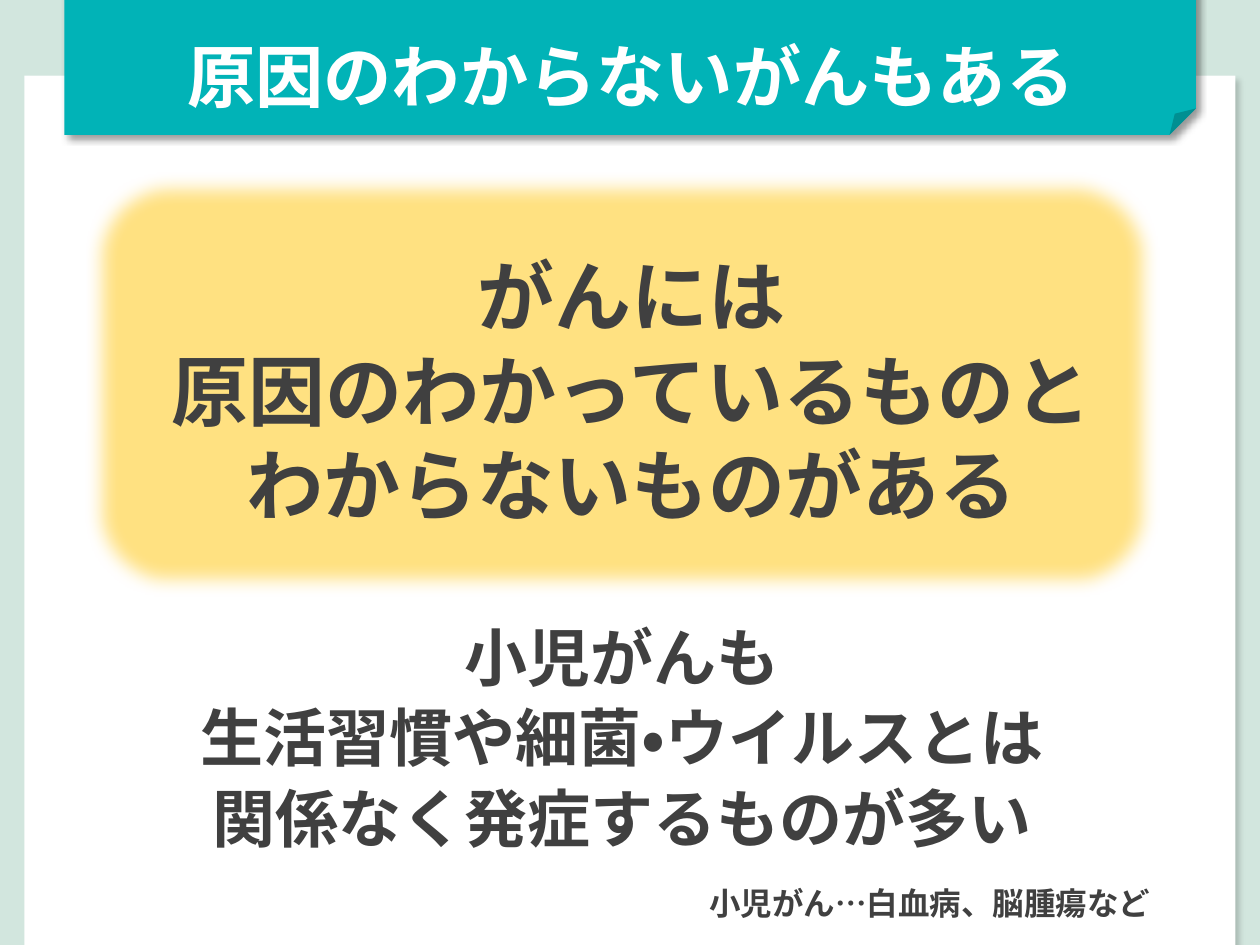
import pptx
import pptx.util
import pptx.dml.color
import pptx.enum.shapes
import pptx.enum.text
import pptx.oxml
import pptx.oxml.ns

Pt = pptx.util.Pt
Shape = pptx.enum.shapes.MSO_SHAPE
Align = pptx.enum.text.PP_ALIGN
Anchor = pptx.enum.text.MSO_ANCHOR

# Content: each line is a list of (text, letter spacing in points)
TITLE = [[("原因のわからないがんもある", 0)]]
MESSAGE = [
    [("がんには\v原因のわかっているものと", 0)],
    [("わからないものがある", 0)],
]
CHILDHOOD = [
    [("小児がんも", 0)],
    [("生活習慣や細", 0), ("菌", -7), ("・", -10), ("ウイルスとは", 0)],
    [("関係なく発症するものが多い", 0)],
]
FOOTNOTE = [[("小児がん…白血病、脳腫瘍など", 0)]]

THEME = {
    "mint": "D2E6DE", "white": "FFFFFF", "teal": "01B3B7",
    "yellow": "FFE181", "ink": "404040", "shadow": "000000",
    "heading_font": "TeX Gyre Adventor", "note_font": "Arial",
    "title": 39, "message": 44, "childhood": 36, "note": 18,
}
SLIDE_WIDTH, SLIDE_HEIGHT = 720, 540


def color(name):
    return pptx.dml.color.RGBColor.from_string(THEME[name])


def add_effect(shape, xml):
    """Put one effect into the shape's effect list."""
    shape.shadow.inherit = False
    effects = shape._element.spPr.find(pptx.oxml.ns.qn("a:effectLst"))
    effects.append(pptx.oxml.parse_xml(xml))


def add_shadow(shape, opacity, blur, distance, angle=45):
    add_effect(shape, (
        f'<a:outerShdw {pptx.oxml.ns.nsdecls("a")} blurRad="{Pt(blur)}" '
        f'dist="{Pt(distance)}" dir="{angle * 60000}" algn="tl" rotWithShape="0">'
        f'<a:srgbClr val="{THEME["shadow"]}"><a:alpha val="{opacity * 1000}"/>'
        '</a:srgbClr></a:outerShdw>'))


def add_soft_edge(shape, radius):
    add_effect(shape, f'<a:softEdge {pptx.oxml.ns.nsdecls("a")} rad="{Pt(radius)}"/>')


def add_block(page, kind, bounds, fill=None):
    block = page.shapes.add_shape(kind, *map(Pt, bounds))
    block.shadow.inherit = False
    block.line.fill.background()
    if fill:
        block.fill.solid()
        block.fill.fore_color.rgb = color(fill)
    else:
        block.fill.background()
    return block


def write(box, lines, size, ink="ink", font="heading_font", align=Align.CENTER,
          line_height=None, anchor=Anchor.TOP):
    frame = box.text_frame
    frame.word_wrap = True
    frame.auto_size = pptx.enum.text.MSO_AUTO_SIZE.SHAPE_TO_FIT_TEXT
    frame.vertical_anchor = anchor
    for index, line in enumerate(lines):
        para = frame.add_paragraph() if index else frame.paragraphs[0]
        para.alignment = align
        if line_height:
            para.line_spacing = Pt(line_height)
        for text, spacing in line:
            for part_index, part in enumerate(text.split("\v")):
                if part_index:
                    para.add_line_break()
                span = para.add_run()
                span.text = part
                span.font.size = Pt(THEME[size])
                span.font.name = THEME[font]
                span.font.bold = True
                span.font.color.rgb = color(ink)
                properties = span.font._element
                properties.set("lang", "ja-JP")
                if spacing:
                    properties.set("spc", str(spacing * 100))


def add_text(page, bounds, lines, **style):
    write(page.shapes.add_textbox(*map(Pt, bounds)), lines, **style)


def main():
    deck = pptx.Presentation()
    deck.slide_width, deck.slide_height = Pt(SLIDE_WIDTH), Pt(SLIDE_HEIGHT)
    page = deck.slides.add_slide(deck.slide_layouts[6])

    # Backdrop, white sheet and folded banner
    add_block(page, Shape.RECTANGLE, (0, 0, SLIDE_WIDTH, SLIDE_HEIGHT), "mint")
    sheet = add_block(page, Shape.RECTANGLE, (14, 43.2, 692, 509), "white")
    add_shadow(sheet, opacity=18, blur=3, distance=4)
    banner = add_block(page, Shape.FOLDED_CORNER, (36.8, -13.6, 646.6, 90.7), "teal")
    add_shadow(banner, opacity=40, blur=4, distance=3)

    # Title and supporting statement
    add_text(page, (84.8, 347, 541.5, 146), CHILDHOOD, size="childhood", line_height=46)
    add_text(page, (26, 15.8, 669, 55.4), TITLE, size="title", ink="white")

    # Main message on a soft yellow panel
    panel = add_block(page, Shape.ROUNDED_RECTANGLE, (49, 98.6, 613.4, 242.6), "yellow")
    add_soft_edge(panel, 10)
    add_text(page, (66.2, 137.5, 589.7, 170.6), MESSAGE, size="message", line_height=54)

    # Footnote
    note = add_block(page, Shape.ROUNDED_RECTANGLE, (396.7, 499.7, 301.7, 32.4))
    write(note, FOOTNOTE, size="note", font="note_font", align=Align.LEFT,
          anchor=Anchor.MIDDLE)

    deck.save("out.pptx")


if __name__ == "__main__":
    main()
